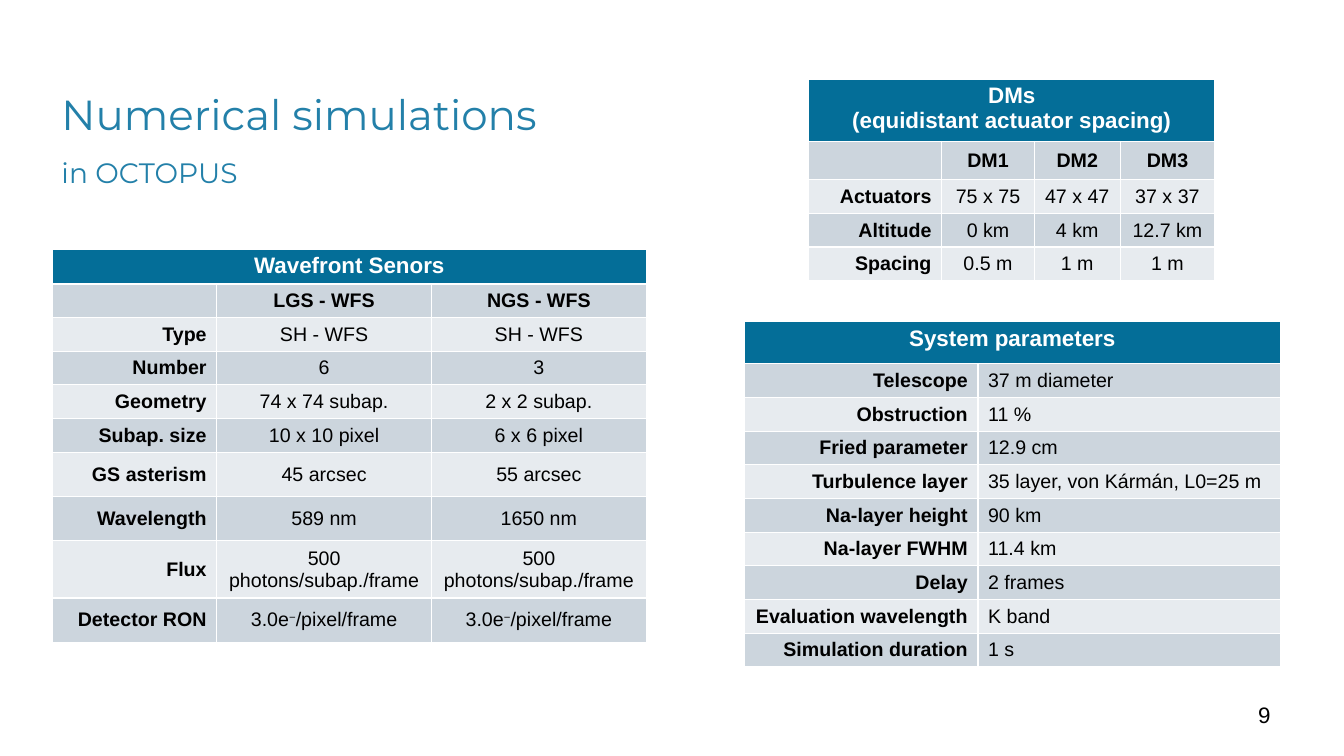
from pptx import Presentation
from pptx.dml.color import RGBColor
from pptx.enum.text import MSO_ANCHOR, MSO_AUTO_SIZE, PP_ALIGN
from pptx.util import Inches, Pt

SENSORS = [
    ["Wavefront Senors"],
    ["", "LGS - WFS", "NGS - WFS"],
    ["Type", "SH - WFS", "SH - WFS"],
    ["Number", "6", "3"],
    ["Geometry", "74 x 74 subap.", "2 x 2 subap."],
    ["Subap. size", "10 x 10 pixel", "6 x 6 pixel"],
    ["GS asterism", "45 arcsec", "55 arcsec"],
    ["Wavelength", "589 nm", "1650 nm"],
    ["Flux", "500\nphotons/subap./frame", "500\nphotons/subap./frame"],
    ["Detector RON", "3.0e−/pixel/frame", "3.0e−/pixel/frame"],
]
MIRRORS = [
    ["DMs\n(equidistant actuator spacing)"],
    ["", "DM1", "DM2", "DM3"],
    ["Actuators", "75 x 75", "47 x 47", "37 x 37"],
    ["Altitude", "0 km", "4 km", "12.7 km"],
    ["Spacing", "0.5 m", "1 m", "1 m"],
]
SYSTEM = [
    ["System parameters"],
    ["Telescope", "37 m diameter"],
    ["Obstruction", "11 %"],
    ["Fried parameter", "12.9 cm"],
    ["Turbulence layer", "35 layer, von Kármán, L0=25 m"],
    ["Na-layer height", "90 km"],
    ["Na-layer FWHM", "11.4 km"],
    ["Delay", "2 frames"],
    ["Evaluation wavelength", "K band"],
    ["Simulation duration", "1 s"],
]


def color(code):
    """Turn a hex string into a colour."""
    return RGBColor.from_string(code)


def style(font, size, code, name="Arial", bold=False):
    """Set the face, size, colour and weight of a font."""
    font.name, font.size, font.bold = name, Pt(size), bold
    font.color.rgb = color(code)


def place(shape, box):
    """Move and size a shape to a box in inches."""
    shape.left, shape.top, shape.width, shape.height = map(Inches, box)


def add_title(slide, box):
    """Fill the title with a heading and a smaller second line."""
    title = slide.shapes.title
    place(title, box)
    frame = title.text_frame
    frame.word_wrap, frame.auto_size = True, MSO_AUTO_SIZE.NONE
    frame.vertical_anchor = MSO_ANCHOR.TOP
    frame.margin_left, frame.margin_top = Inches(0.08), 0
    para = frame.paragraphs[0]
    para.alignment, para.line_spacing = PP_ALIGN.LEFT, 1.5
    head = para.add_run()
    head.text = "Numerical simulations"
    para.add_line_break()
    tail = para.add_run()
    tail.text = "in OCTOPUS"
    for run, size in ((head, 30), (tail, 20)):
        style(run.font, size, "2380A9", "Montserrat")


def add_number(slide, box):
    """Write the page number at the right of a box."""
    frame = slide.shapes.add_textbox(*map(Inches, box)).text_frame
    frame.word_wrap, frame.vertical_anchor = True, MSO_ANCHOR.BOTTOM
    para = frame.paragraphs[0]
    para.text = "9"
    para.alignment, para.line_spacing = PP_ALIGN.RIGHT, 0.83
    style(para.font, 16, "000000")


def write(para, text):
    """Write text, raising a minus sign that follows an e."""
    if "e−" not in text:
        para.text = text
        return
    start, end = text.split("−")
    for part in (start, "−", end):
        run = para.add_run()
        run.text = part
        if part == "−":
            run._r.get_or_add_rPr().set("baseline", "30000")


def add_head(table, text, pad):
    """Merge the top row and write the table heading."""
    cell = table.cell(0, 0)
    cell.merge(table.cell(0, len(table.columns) - 1))
    cell.fill.solid()
    cell.fill.fore_color.rgb = color("046E98")
    cell.margin_top = cell.margin_bottom = Inches(pad)
    para = cell.text_frame.paragraphs[0]
    para.text, para.alignment = text, PP_ALIGN.CENTER
    style(para.font, 16, "FFFFFF", bold=True)


def add_grid(slide, spot, rows, widths, heights, align=PP_ALIGN.CENTER, pad=0.04):
    """Draw a banded table with bold labels at a spot."""
    box = (*spot, sum(widths), sum(heights))
    shape = slide.shapes.add_table(len(rows), len(widths), *map(Inches, box))
    table = shape.table
    table.horz_banding = False
    for col, width in zip(table.columns, widths):
        col.width = Inches(width)
    for row, height in zip(table.rows, heights):
        row.height = Inches(height)
    add_head(table, rows[0][0], pad)
    for i, row in enumerate(rows[1:], 1):
        for j, text in enumerate(row):
            cell = table.cell(i, j)
            cell.fill.solid()
            cell.fill.fore_color.rgb = color("CCD5DD" if i % 2 else "E7EBEF")
            cell.vertical_anchor = MSO_ANCHOR.MIDDLE
            para = cell.text_frame.paragraphs[0]
            write(para, text)
            para.alignment = align if j else PP_ALIGN.RIGHT
            style(para.font, 14, "000000", bold=j == 0 or row[0] == "")


def main():
    """Build the slide and save it."""
    deck = Presentation()
    deck.slide_width, deck.slide_height = Inches(13.33), Inches(7.5)
    slide = deck.slides.add_slide(deck.slide_layouts[5])
    add_title(slide, (0.53, 0.63, 12.17, 1.08))
    add_number(slide, (0.52, 6.97, 12.18, 0.3))
    add_grid(slide, (7.38, 3.19), SYSTEM, [2.32, 3.0], [0.42] + [0.32] * 9,
             PP_ALIGN.LEFT, 0.05)
    add_grid(slide, (0.52, 2.47), SENSORS, [1.63, 2.13, 2.13],
             [0.32] * 6 + [0.44, 0.44, 0.53, 0.44])
    add_grid(slide, (8.02, 0.79), MIRRORS, [1.32, 0.92, 0.85, 0.94],
             [0.57, 0.38] + [0.32] * 3)
    deck.save("out.pptx")


if __name__ == "__main__":
    main()
